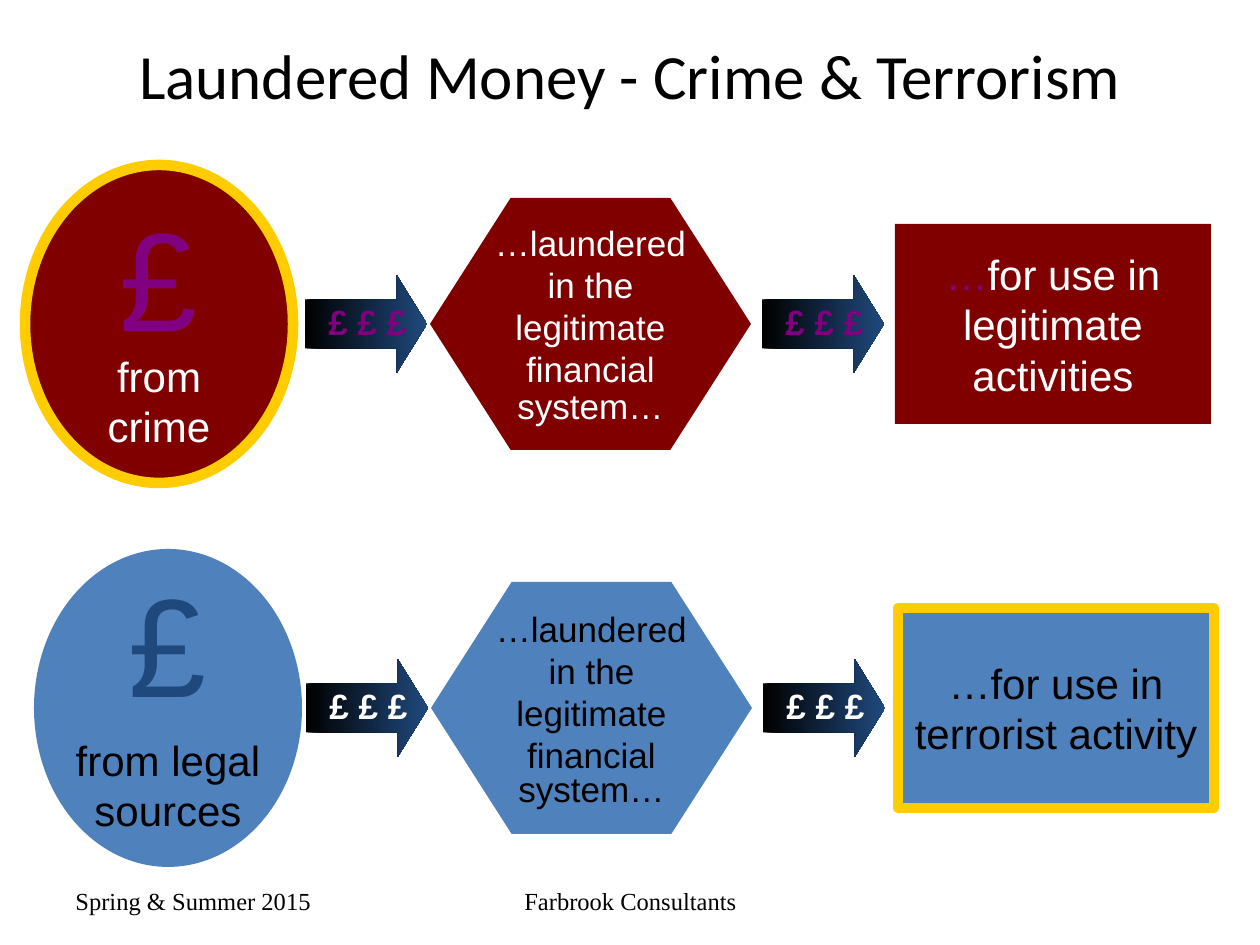
import dataclasses

import pptx
import pptx.dml.color
import pptx.enum.shapes
import pptx.enum.text
import pptx.util

PX = 914400 / 126
SHAPE = pptx.enum.shapes.MSO_SHAPE
ALIGN = pptx.enum.text.PP_ALIGN
ANCHOR = pptx.enum.text.MSO_ANCHOR


@dataclasses.dataclass(frozen=True)
class Theme:
    black: str = "000000"
    white: str = "FFFFFF"
    maroon: str = "800000"
    purple: str = "800080"
    blue: str = "4F81BD"
    navy: str = "1F497D"
    gold: str = "FFCC00"
    body_font: str = "Arial"
    title_font: str = "Calibri"
    footer_font: str = "Times New Roman"
    title_size: int = 36
    large_size: int = 24
    medium_size: int = 20
    footer_size: int = 14
    pound_size: int = 80
    outline: int = 6


THEME = Theme()


@dataclasses.dataclass(frozen=True)
class Flow:
    """One row: money source, laundering, use. Shapes centre on axis."""
    axis: int
    source_left: int
    pound_top: int
    arrow_lefts: tuple
    hexagon_left: int
    use_left: int
    fill: str
    ink: str
    pound_ink: str
    cash_ink: str
    lead_ink: str
    last_spacing: float
    source: str
    use_lines: tuple
    source_outline: str = ""
    use_outline: str = ""


FLOWS = (
    Flow(axis=324, source_left=25, pound_top=185, arrow_lefts=(305, 762),
         hexagon_left=430, use_left=895, fill=THEME.maroon, ink=THEME.white,
         pound_ink=THEME.purple, cash_ink=THEME.purple, lead_ink=THEME.purple,
         last_spacing=0.9, source="from\vcrime",
         use_lines=("for use in", "legitimate", "activities"),
         source_outline=THEME.gold),
    Flow(axis=708, source_left=34, pound_top=551, arrow_lefts=(306, 763),
         hexagon_left=431, use_left=898, fill=THEME.blue, ink=THEME.black,
         pound_ink=THEME.navy, cash_ink=THEME.white, lead_ink=THEME.black,
         last_spacing=0.8, source="from legal\nsources",
         use_lines=("for use in", "terrorist activity"),
         use_outline=THEME.gold),
)


def px(value):
    return pptx.util.Emu(round(value * PX))


def rgb(value):
    return pptx.dml.color.RGBColor.from_string(value)


def format_text(frame, size, color, font=THEME.body_font, bold=False,
                align=ALIGN.CENTER):
    for para in frame.paragraphs:
        para.alignment = align
        for span in para.runs:
            span.font.name = font
            span.font.size = pptx.util.Pt(size)
            span.font.bold = bold
            span.font.color.rgb = rgb(color)


def add_label(shapes, box, text, size, color, **style):
    label = shapes.add_textbox(*map(px, box))
    label.text_frame.word_wrap = True
    label.text_frame.text = text
    format_text(label.text_frame, size, color, **style)
    return label


def add_block(shapes, kind, left, axis, width, height, fill, outline=""):
    """Add a filled shape centred vertically on axis."""
    block = shapes.add_shape(kind, px(left), px(axis - height / 2),
                             px(width), px(height))
    block.shadow.inherit = False
    block.fill.solid()
    block.fill.fore_color.rgb = rgb(fill)
    if outline:
        block.line.color.rgb = rgb(outline)
        block.line.width = pptx.util.Pt(THEME.outline)
    else:
        block.line.fill.background()
    block.text_frame.word_wrap = False
    block.text_frame.vertical_anchor = ANCHOR.MIDDLE
    return block


def add_source(shapes, flow):
    circle = add_block(shapes, SHAPE.OVAL, flow.source_left, flow.axis,
                       268, 318, flow.fill, flow.source_outline)
    frame = circle.text_frame
    frame.vertical_anchor = ANCHOR.TOP
    frame.margin_top = px(139)
    frame.margin_bottom = 0
    frame.text = flow.source
    format_text(frame, THEME.large_size, flow.ink)
    add_label(shapes, (flow.source_left + 82, flow.pound_top, 106, 180), "£",
              THEME.pound_size, flow.pound_ink, align=ALIGN.LEFT)


def add_use(shapes, flow):
    frame = add_block(shapes, SHAPE.RECTANGLE, flow.use_left, flow.axis,
                      316, 200, flow.fill, flow.use_outline).text_frame
    frame.text = "…"
    para = frame.paragraphs[0]
    for index, line in enumerate(flow.use_lines):
        if index:
            para.add_line_break()
        para.add_run().text = line
    format_text(frame, THEME.large_size, flow.ink)
    para.runs[0].font.color.rgb = rgb(flow.lead_ink)


def add_cash_arrow(shapes, left, flow):
    arrow = add_block(shapes, SHAPE.RIGHT_ARROW, left, flow.axis,
                      122, 98, THEME.navy)
    arrow.adjustments[0] = 0.5
    arrow.adjustments[1] = 0.31
    arrow.fill.gradient()
    arrow.fill.gradient_angle = 0
    for stop, position, color in zip(arrow.fill.gradient_stops, (0, 1),
                                     (THEME.black, THEME.navy)):
        stop.position = position
        stop.color.rgb = rgb(color)
    add_label(shapes, (left + 11, flow.axis - 30, 106, 54), "£ £ £",
              THEME.medium_size, flow.cash_ink, bold=True, align=ALIGN.LEFT)


def add_laundering(shapes, flow):
    hexagon = add_block(shapes, SHAPE.HEXAGON, flow.hexagon_left, flow.axis,
                        321, 252, flow.fill)
    hexagon.adjustments[0] = 0.32
    frame = hexagon.text_frame
    frame.text = "…laundered\vin the\vlegitimate\vfinancial\nsystem…"
    format_text(frame, THEME.medium_size, flow.ink)
    frame.paragraphs[-1].line_spacing = flow.last_spacing


def add_flow(page, flow):
    shapes = page.shapes.add_group_shape().shapes
    add_source(shapes, flow)
    add_use(shapes, flow)
    for left in flow.arrow_lefts:
        add_cash_arrow(shapes, left, flow)
    add_laundering(shapes, flow)


def set_title(page, text):
    title = page.shapes.title
    title.left, title.top, title.width, title.height = map(
        px, (0, 32, 1260, 84))
    frame = title.text_frame
    frame.text = text
    frame.auto_size = pptx.enum.text.MSO_AUTO_SIZE.NONE
    frame.vertical_anchor = ANCHOR.MIDDLE
    format_text(frame, THEME.title_size, THEME.black, THEME.title_font)


def add_footer(page, left, width, text, align):
    label = add_label(page.shapes, (left, 876, width, 50), text,
                      THEME.footer_size, THEME.black,
                      font=THEME.footer_font, align=align)
    label.text_frame.vertical_anchor = ANCHOR.MIDDLE


def main():
    deck = pptx.Presentation()
    deck.slide_width, deck.slide_height = px(1260), px(945)
    page = deck.slides.add_slide(deck.slide_layouts[5])
    add_footer(page, 63, 294, "Spring & Summer 2015", ALIGN.LEFT)
    add_footer(page, 431, 399, "Farbrook Consultants", ALIGN.CENTER)
    set_title(page, "Laundered Money - Crime & Terrorism")
    for flow in FLOWS:
        add_flow(page, flow)
    deck.save("out.pptx")


if __name__ == "__main__":
    main()
